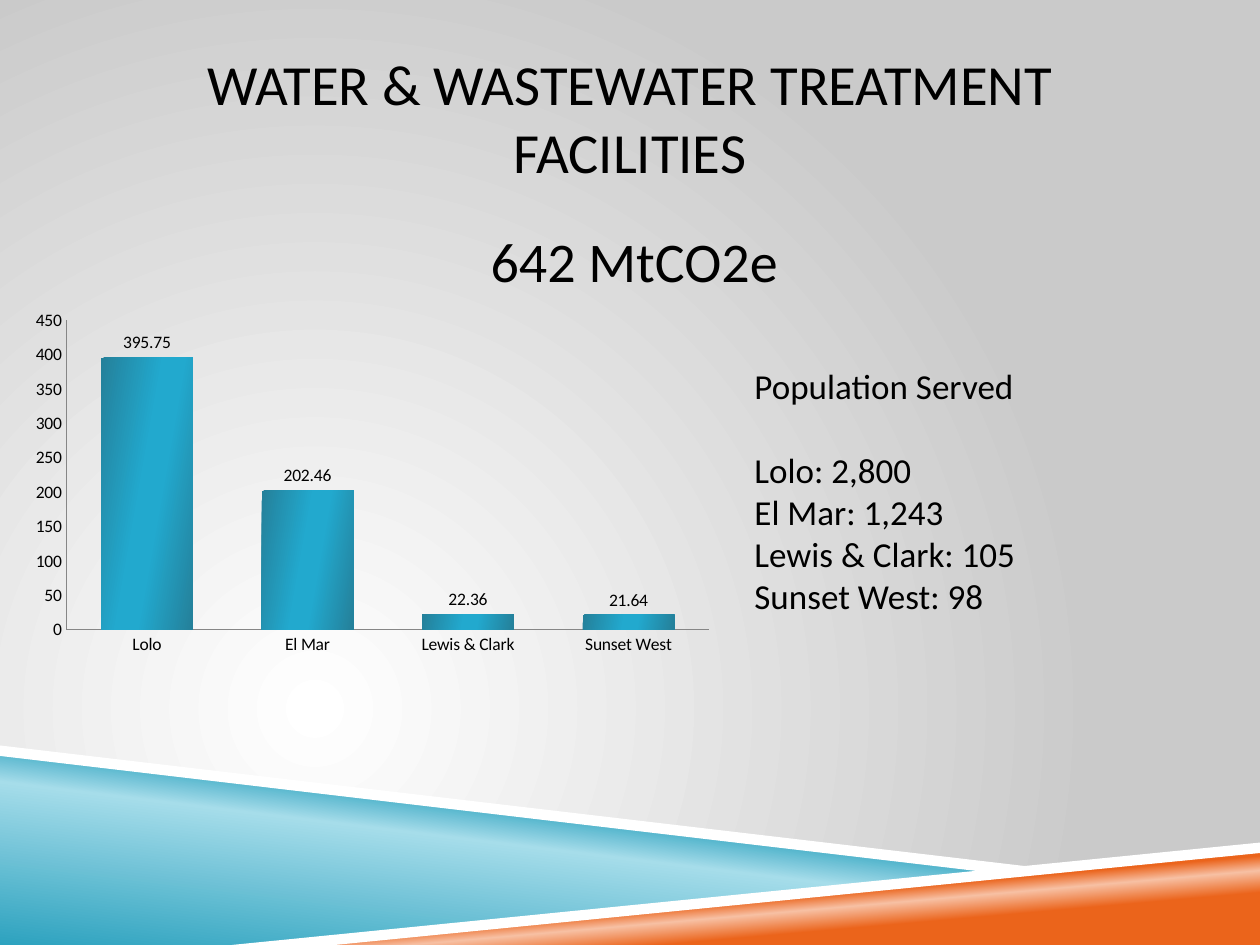
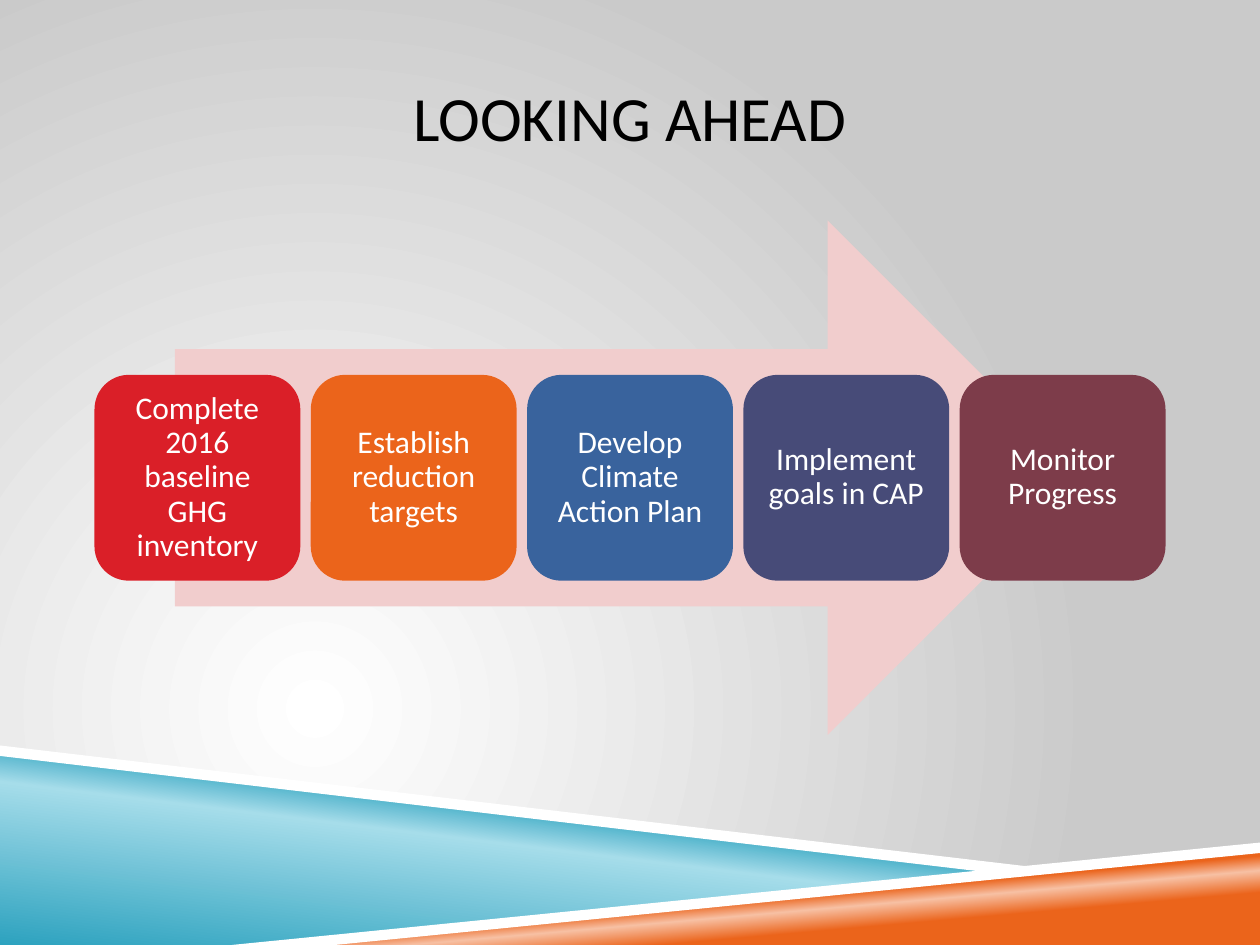
from lxml import etree
from pptx import Presentation
from pptx.chart.data import CategoryChartData as Data
from pptx.dml.color import RGBColor as Rgb
from pptx.enum.chart import XL_CHART_TYPE as Kind, XL_LABEL_POSITION as Spot
from pptx.enum.chart import XL_TICK_MARK as Tick
from pptx.enum.shapes import MSO_SHAPE as Form
from pptx.enum.text import MSO_ANCHOR as Anchor, PP_ALIGN as Align
from pptx.oxml.ns import qn
from pptx.util import Pt

FONT = "Calibri"
WIDE, HIGH = 720, 540
EDGE = 54  # side margin
SPAN = WIDE - 2 * EDGE
HUES = {
    "text": "000000", "white": "FFFFFF", "gray": "CACACA", "axis": "868686",
    "teal": "2DA2BF", "aqua": "A6DDEA", "orange": "EB641B", "peach": "F7C1A4",
    "deep": "24809A", "bright": "22A9CE", "pink": "F1CDCD", "red": "DA1F28",
    "blue": "39639D", "navy": "474B78", "wine": "7D3C4A",
}

# Bands at the foot: corner points, then a plain hue or (stops, angle)
BANDS = [
    ([(0, 430), (570, 498), (144, 540), (0, 540)],
     ([(0, "teal"), (52, "aqua"), (66, "teal")], 277)),
    ([(142.5, 540), (720, 484), (720, 540)],
     ([(28, "orange"), (40, "peach"), (48, "orange")], 265)),
    ([(0, 426), (0, 432), (569, 499), (599, 496.5)], "white"),
    ([(720, 481.5), (132.5, 540), (191.5, 540), (720, 487.5)], "white"),
]

SITES = {"Lolo": 395.75, "El Mar": 202.46, "Lewis & Clark": 22.36,
         "Sunset West": 21.64}
SERVED = ["Population Served", "Lolo: 2,800", "El Mar: 1,243",
          "Lewis & Clark: 105", "Sunset West: 98"]
STEPS = [("Complete 2016 baseline GHG inventory", "red"),
         ("Establish reduction targets", "orange"),
         ("Develop Climate Action Plan", "blue"),
         ("Implement goals in CAP", "navy"),
         ("Monitor Progress", "wine")]


def hue(name):
    return Rgb.from_string(HUES[name])


def blend(host, stops, angle=None):
    """Swap the solid fill in host for a linear or a radial gradient."""
    old = host.find(qn("a:solidFill"))
    new = etree.Element(qn("a:gradFill"), rotWithShape="1")
    row = etree.SubElement(new, qn("a:gsLst"))
    for place, name in stops:
        stop = etree.SubElement(row, qn("a:gs"), pos=str(place * 1000))
        etree.SubElement(stop, qn("a:srgbClr"), val=HUES[name])
    if angle is None:
        way = etree.SubElement(new, qn("a:path"))
        way.set("path", "circle")
        etree.SubElement(way, qn("a:fillToRect"), l="50000", t="100000",
                         r="100000", b="50000")
    else:
        etree.SubElement(new, qn("a:lin"), ang=str(angle * 60000), scaled="0")
    host.replace(old, new)


def paint(shape, name):
    shape.shadow.inherit = False
    shape.line.fill.background()
    shape.fill.solid()
    shape.fill.fore_color.rgb = hue(name)


def write(shape, lines, size=18, tint="text", align=Align.LEFT,
          anchor=Anchor.TOP, pad=(0, 3.6), space=None, gap=0):
    """Fill a shape with text; gap is the space after the first line."""
    frame = shape.text_frame
    frame.word_wrap = True
    frame.vertical_anchor = anchor
    frame.margin_left = frame.margin_right = Pt(pad[0])
    frame.margin_top = frame.margin_bottom = Pt(pad[1])
    for i, line in enumerate(lines):
        para = frame.add_paragraph() if i else frame.paragraphs[0]
        para.text = line
        para.alignment = align
        if space:
            para.line_spacing = space
        if gap and i == 0:
            para.space_after = Pt(gap)
        font = para.font
        font.name, font.size = FONT, Pt(size)
        font.color.rgb = hue(tint)


def label(slide, box, lines, **style):
    write(slide.shapes.add_textbox(*map(Pt, box)), lines, **style)


def block(slide, form, box, name):
    shape = slide.shapes.add_shape(form, *map(Pt, box))
    paint(shape, name)
    return shape


def band(slide, points, fill):
    spots = [(Pt(x), Pt(y)) for x, y in points]
    pen = slide.shapes.build_freeform(*spots[0])
    pen.add_line_segments(spots[1:], close=True)
    shape = pen.convert_to_shape()
    if isinstance(fill, str):
        paint(shape, fill)
    else:
        paint(shape, "white")
        blend(shape._element.spPr, *fill)


def start(deck, title, size):
    """Add a slide with the shared backdrop, bands and title."""
    slide = deck.slides.add_slide(deck.slide_layouts[6])
    slide.background.fill.solid()
    blend(slide._element.find(".//" + qn("p:bgPr")),
          [(0, "white"), (100, "gray")])
    for points, fill in BANDS:
        band(slide, points, fill)
    label(slide, (EDGE, 21.6, SPAN, 90), [title], size=size,
          align=Align.CENTER, anchor=Anchor.MIDDLE)
    return slide


def place(chart, x, y, w, h):
    """Pin the inner plot area, in parts of the chart's size."""
    area = chart._chartSpace.find(".//" + qn("c:plotArea"))
    for old in area.findall(qn("c:layout")):
        area.remove(old)
    layout = etree.Element(qn("c:layout"))
    area.insert(0, layout)
    manual = etree.SubElement(layout, qn("c:manualLayout"))
    parts = [("layoutTarget", "inner"), ("xMode", "edge"), ("yMode", "edge"),
             ("x", x), ("y", y), ("w", w), ("h", h)]
    for tag, val in parts:
        etree.SubElement(manual, qn("c:" + tag), val=str(val))


def columns(slide, box, values):
    data = Data()
    data.categories = list(values)
    data.add_series("Series 1", list(values.values()))
    chart = slide.shapes.add_chart(Kind.COLUMN_CLUSTERED, *map(Pt, box),
                                   data).chart
    chart.has_legend = chart.has_title = False
    chart.font.name, chart.font.size = FONT, Pt(10)
    chart.font.color.rgb = hue("text")
    place(chart, 0.064, 0.043, 0.897, 0.83)

    # Axes
    for axis in (chart.category_axis, chart.value_axis):
        axis.has_major_gridlines = False
        axis.major_tick_mark = axis.minor_tick_mark = Tick.NONE
        axis.format.line.color.rgb = hue("axis")
        axis.format.line.width = Pt(0.75)
    scale = chart.value_axis
    scale.minimum_scale, scale.maximum_scale, scale.major_unit = 0, 450, 50

    # Bars and their values
    plot = chart.plots[0]
    plot.gap_width = 75
    plot.vary_by_categories = False
    plot.has_data_labels = True
    plot.data_labels.show_value = True
    plot.data_labels.position = Spot.OUTSIDE_END
    bars = plot.series[0]
    bars.format.fill.solid()
    bars.format.fill.fore_color.rgb = hue("teal")
    blend(bars._element.find(qn("c:spPr")),
          [(0, "deep"), (45, "bright"), (60, "bright"), (100, "deep")], 10)


def water(deck):
    slide = start(deck, "WATER & WASTEWATER TREATMENT FACILITIES", 32.4)
    label(slide, (EDGE + 5, 126, SPAN - 5, 48), ["642 MtCO2e"], size=32,
          align=Align.CENTER)
    columns(slide, (12, 174, 409, 213), SITES)
    label(slide, (424, 204.5, 275, 152.5), SERVED, size=20, pad=(7.2, 3.6),
          gap=24)


def ahead(deck):
    slide = start(deck, "LOOKING AHEAD", 36)
    block(slide, Form.RIGHT_ARROW, (100, 126, 520, 294), "pink")
    side = 117.6
    pitch = (SPAN - side) / (len(STEPS) - 1)
    for i, (text, name) in enumerate(STEPS):
        card = block(slide, Form.ROUNDED_RECTANGLE,
                     (EDGE + i * pitch, 214.2, side, side), name)
        write(card, [text], tint="white", align=Align.CENTER,
              anchor=Anchor.MIDDLE, pad=(5, 5), space=0.9)


def main():
    deck = Presentation()
    deck.slide_width, deck.slide_height = Pt(WIDE), Pt(HIGH)
    water(deck)
    ahead(deck)
    deck.save("out.pptx")


if __name__ == "__main__":
    main()
